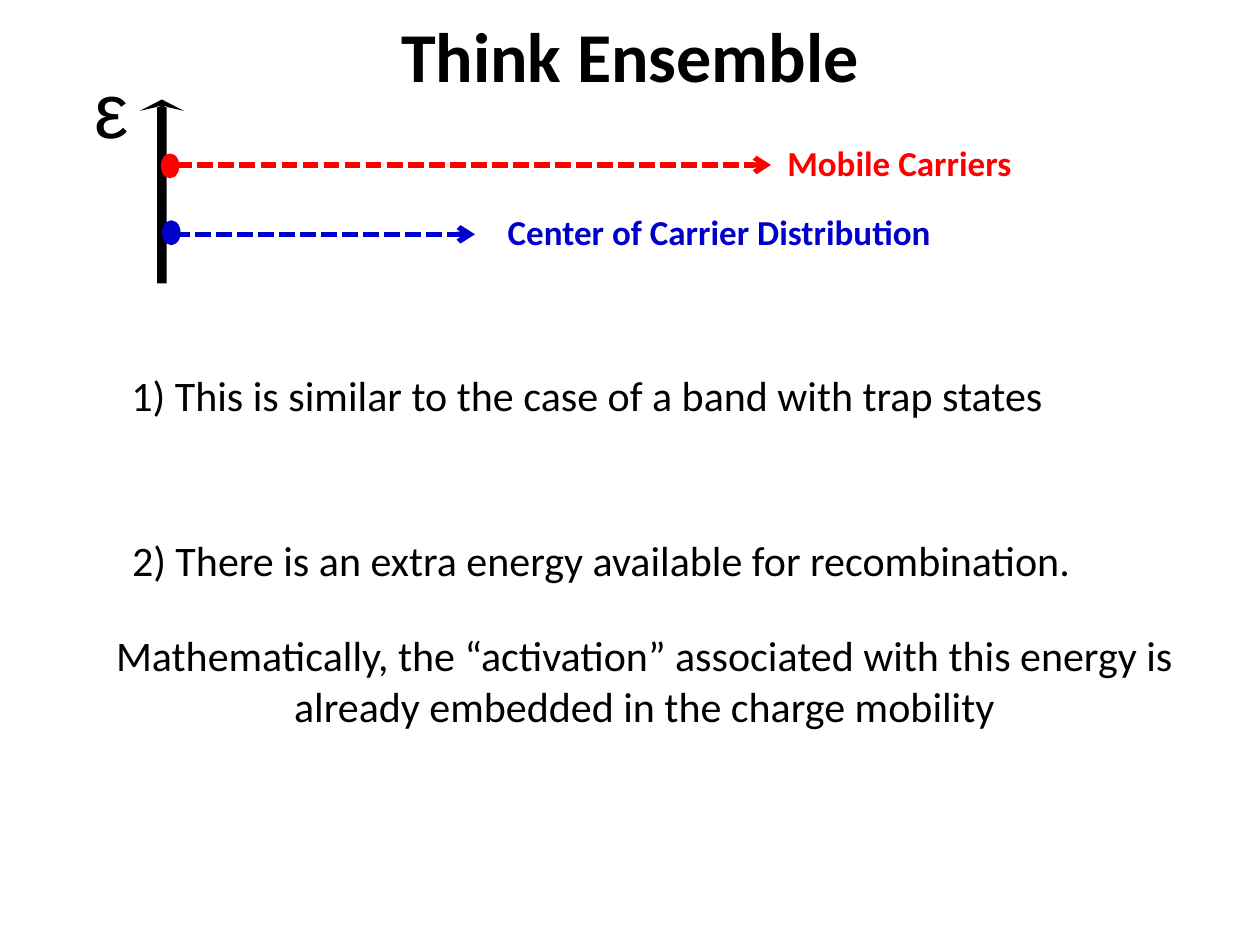
from lxml.etree import SubElement
from pptx import Presentation
from pptx.dml.color import RGBColor
from pptx.enum.dml import MSO_LINE
from pptx.enum.shapes import MSO_CONNECTOR, MSO_SHAPE
from pptx.enum.text import MSO_ANCHOR, PP_ALIGN
from pptx.oxml.ns import qn
from pptx.util import Pt

BLACK = RGBColor(0x00, 0x00, 0x00)
RED = RGBColor(0xFF, 0x00, 0x00)
BLUE = RGBColor(0x00, 0x00, 0xCC)


class EnergySlide:
    """Holds the text style and the slide being drawn."""

    font = "Calibri"
    body_size = 24
    label_size = 20

    def __init__(self, deck):
        self.slide = deck.slides.add_slide(deck.slide_layouts[5])
        self.shapes = self.slide.shapes

    def set_text(self, frame, text, size, color=BLACK, bold=False,
                 align=PP_ALIGN.LEFT, font=None, wrap=False):
        frame.text = text
        frame.word_wrap = wrap
        frame.vertical_anchor = MSO_ANCHOR.TOP
        paragraph = frame.paragraphs[0]
        paragraph.alignment = align
        style = paragraph.runs[0].font
        style.name = font or self.font
        style.size = Pt(size)
        style.bold = bold
        style.color.rgb = color

    def title(self, text, left, top, width, height):
        heading = self.shapes.title
        heading.left, heading.top = Pt(left), Pt(top)
        heading.width, heading.height = Pt(width), Pt(height)
        self.set_text(heading.text_frame, text, 40, bold=True,
                      align=PP_ALIGN.CENTER)

    def text(self, text, left, top, width, height, size, inset=True, **style):
        box = self.shapes.add_textbox(Pt(left), Pt(top), Pt(width), Pt(height))
        frame = box.text_frame
        if not inset:
            frame.margin_left = frame.margin_right = 0
            frame.margin_top = frame.margin_bottom = 0
        self.set_text(frame, text, size, **style)

    def outline(self, contours, color):
        builder = None
        for contour in contours:
            (x, y), *rest = [(Pt(px), Pt(py)) for px, py in contour]
            if builder is None:
                builder = self.shapes.build_freeform(x, y)
            else:
                builder.move_to(x, y)
            builder.add_line_segments(rest, close=True)
        shape = builder.convert_to_shape()
        shape.shadow.inherit = False
        shape.fill.solid()
        shape.fill.fore_color.rgb = color
        shape.line.fill.background()

    def dashed_arrow(self, start, end, y, color):
        arrow = self.shapes.add_connector(
            MSO_CONNECTOR.STRAIGHT, Pt(start), Pt(y), Pt(end), Pt(y))
        line = arrow.line
        line.color.rgb = color
        line.width = Pt(3)
        line.dash_style = MSO_LINE.SQUARE_DOT
        properties = arrow._element.spPr
        SubElement(properties.find(qn("a:ln")), qn("a:tailEnd"), type="arrow")
        SubElement(properties, qn("a:effectLst"))

    def dot(self, left, top, color):
        dot = self.shapes.add_shape(
            MSO_SHAPE.OVAL, Pt(left), Pt(top), Pt(8.6), Pt(12.2))
        dot.shadow.inherit = False
        dot.fill.solid()
        dot.fill.fore_color.rgb = color
        dot.line.color.rgb = color
        dot.line.width = Pt(2)


def main():
    deck = Presentation()
    deck.slide_width, deck.slide_height = Pt(720), Pt(540)
    page = EnergySlide(deck)
    page.title("Think Ensemble", 220.3, 3.6, 279.4, 55.4)

    # Energy axis: a shaft and a swept-back arrowhead
    shaft = [(89.8, 162), (89.8, 60.5), (95.2, 60.5), (95.2, 162)]
    head = [(92.5, 60.5), (79.9, 63.4), (92.5, 56.9), (105.1, 63.4)]
    page.outline([shaft, head], BLACK)
    page.text("ε", 54, 35.3, 19.4, 53.3, 44, inset=False, font="Arial")

    # Energy levels: arrow start, end and height, then label and dot places
    levels = [
        ("Center of Carrier Distribution", BLUE,
         (99.4, 271.4, 133.9), (283, 116.8, 258.5), (93.6, 126.9)),
        ("Mobile Carriers", RED,
         (100.8, 440.6, 94.3), (442.8, 77.2, 144), (92.9, 88.7)),
    ]
    for name, color, arrow, (left, top, width), dot in levels:
        page.dashed_arrow(*arrow, color)
        page.text(name, left, top, width, 31.5, page.label_size,
                  color=color, bold=True)
        page.dot(*dot, color)

    # Conclusions
    page.text("1) This is similar to the case of a band with trap states",
              68, 207.4, 552.2, 36, page.body_size)
    page.text("2) There is an extra energy available for recombination.",
              68.4, 301.7, 609, 36, page.body_size, wrap=True)
    page.text("Mathematically, the “activation” associated with this energy "
              "is already embedded in the charge mobility",
              31, 356.4, 674.6, 65.5, page.body_size, wrap=True,
              align=PP_ALIGN.CENTER)

    deck.save("out.pptx")


if __name__ == "__main__":
    main()
